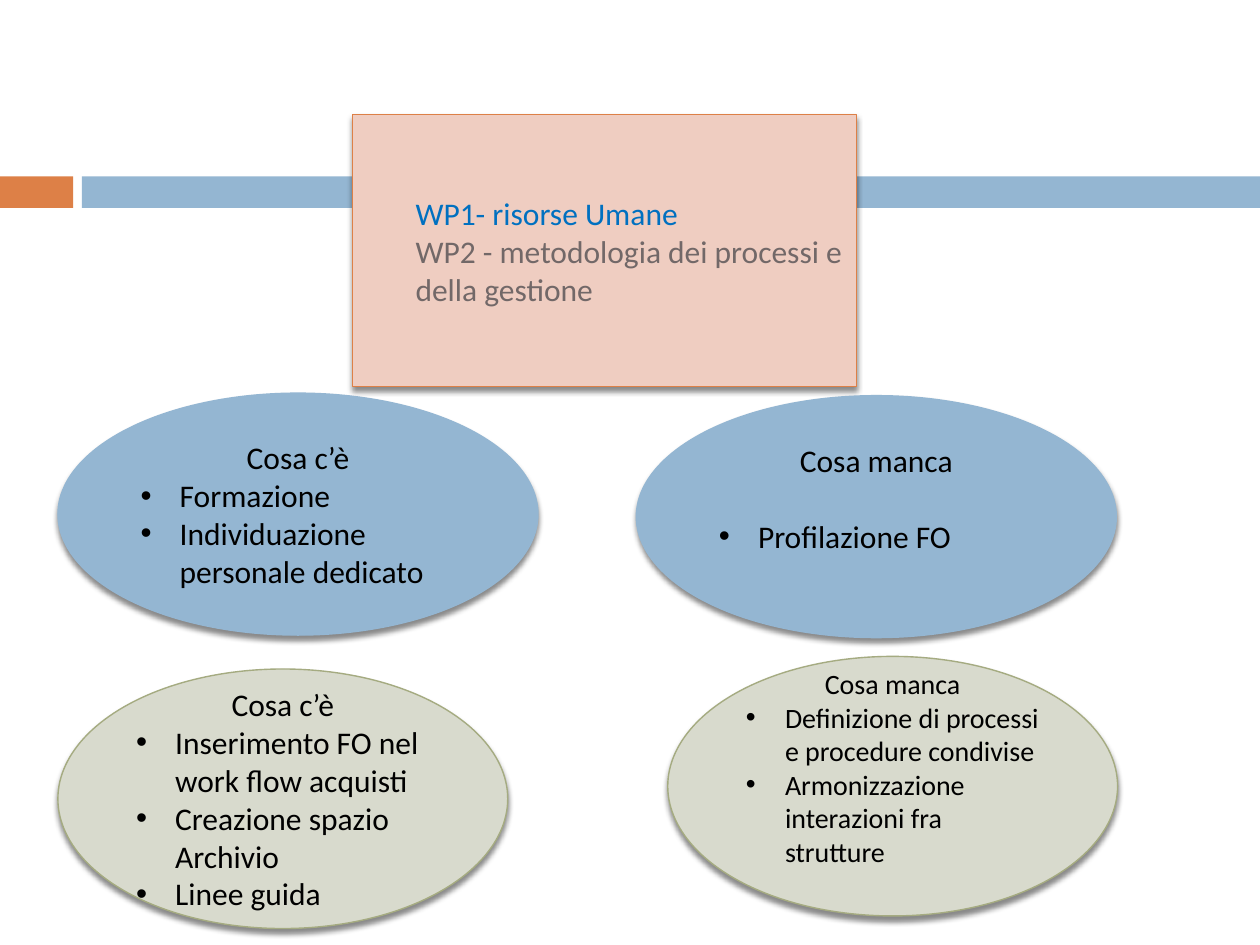
from lxml import etree
from pptx import Presentation, util as u
from pptx.dml.color import RGBColor
from pptx.enum import shapes, text
from pptx.oxml import parse_xml
from pptx.oxml.ns import nsdecls, qn

RECT, OVAL = shapes.MSO_SHAPE.RECTANGLE, shapes.MSO_SHAPE.OVAL
SHADOW = (f'<a:effectLst {nsdecls("a")}><a:outerShdw blurRad="38100" dist="30480" '
          'dir="5400000" rotWithShape="0"><a:srgbClr val="000000">'
          '<a:alpha val="45000"/></a:srgbClr></a:outerShdw></a:effectLst>')


def rgb(value):
    return RGBColor.from_string(value)


def add_block(kind, box, fill, line=None):
    sp = s.shapes.add_shape(kind, *[u.Inches(v) for v in box])
    sp.shadow.inherit = False
    sp.fill.solid()
    sp.fill.fore_color.rgb = rgb(fill)
    if line is None:
        sp.line.fill.background()
        return sp
    sp.line.color.rgb = rgb(line)
    sp.line.width = u.Pt(0.79)
    props = sp._element.spPr
    props.remove(props.find(qn("a:effectLst")))
    props.append(parse_xml(SHADOW))
    sp.text_frame.word_wrap = True
    sp.text_frame.vertical_anchor = text.MSO_ANCHOR.MIDDLE
    return sp


prs = Presentation()
prs.slide_width, prs.slide_height = u.Inches(10), u.Inches(7.5)
s = prs.slides.add_slide(prs.slide_layouts[6])

# Band across the page
add_block(RECT, (0, 1.4, 0.58, 0.25), "DD8047")
add_block(RECT, (0.65, 1.4, 9.35, 0.25), "94B6D2")

# Work packages
tf = add_block(RECT, (2.8, 0.91, 4, 2.16), "EFCDC1", "DD8047").text_frame
packages = [("WP1- risorse Umane", "0070C0"),
            ("WP2 - metodologia dei processi e della gestione", "726868")]
for i, (words, color) in enumerate(packages):
    p = tf.add_paragraph() if i else tf.paragraphs[0]
    p.alignment = text.PP_ALIGN.LEFT
    p.level = 1
    p._p.get_or_add_pPr().set("marL", str(u.Inches(0.4)))
    p._p.get_or_add_pPr().set("indent", "0")
    r = p.add_run()
    r.text = words
    r.font.name, r.font.size = "Calibri", u.Pt(18)
    r.font.color.rgb = rgb(color)

# Ovals: what is there (left), what is missing (right)
green, blue = ("D8DACD", "A5AB81"), ("94B6D2", "94B6D2")
ovals = [
    dict(box=(0.46, 5.31, 3.57, 2.06), colors=green, head="Cosa c’è", size=18,
         items=["Inserimento FO nel work flow acquisti",
                "Creazione spazio Archivio", "Linee guida"]),
    dict(box=(0.46, 3.12, 3.81, 1.92), colors=blue, head="Cosa c’è", size=18,
         items=["Formazione", "Individuazione personale dedicato"]),
    dict(box=(5.3, 5.21, 3.57, 2.06), colors=green, head="Cosa manca", size=16,
         items=["Definizione di processi e procedure condivise",
                "Armonizzazione interazioni fra strutture"], bottom=0.35),
    dict(box=(5.05, 3.14, 3.81, 1.92), colors=blue, head="Cosa manca", size=18,
         items=["Profilazione FO"], gap=22, bottom=0.35),
]
for oval in ovals:
    tf = add_block(OVAL, oval["box"], *oval["colors"]).text_frame
    tf.margin_bottom = u.Inches(oval.get("bottom", 0.05))
    for i, words in enumerate([oval["head"]] + oval["items"]):
        p = tf.add_paragraph() if i else tf.paragraphs[0]
        p.alignment = text.PP_ALIGN.LEFT if i else text.PP_ALIGN.CENTER
        if i == 1 and "gap" in oval:
            p.space_before = u.Pt(oval["gap"])
        if i:
            pPr = p._p.get_or_add_pPr()
            pPr.set("marL", str(u.Inches(0.31)))
            pPr.set("indent", str(u.Inches(-0.31)))
            etree.SubElement(pPr, qn("a:buFont")).set("typeface", "Arial")
            etree.SubElement(pPr, qn("a:buChar")).set("char", "•")
        r = p.add_run()
        r.text = words
        r.font.name, r.font.size = "Calibri", u.Pt(oval["size"])
        r.font.color.rgb = rgb("000000")

prs.save("out.pptx")
